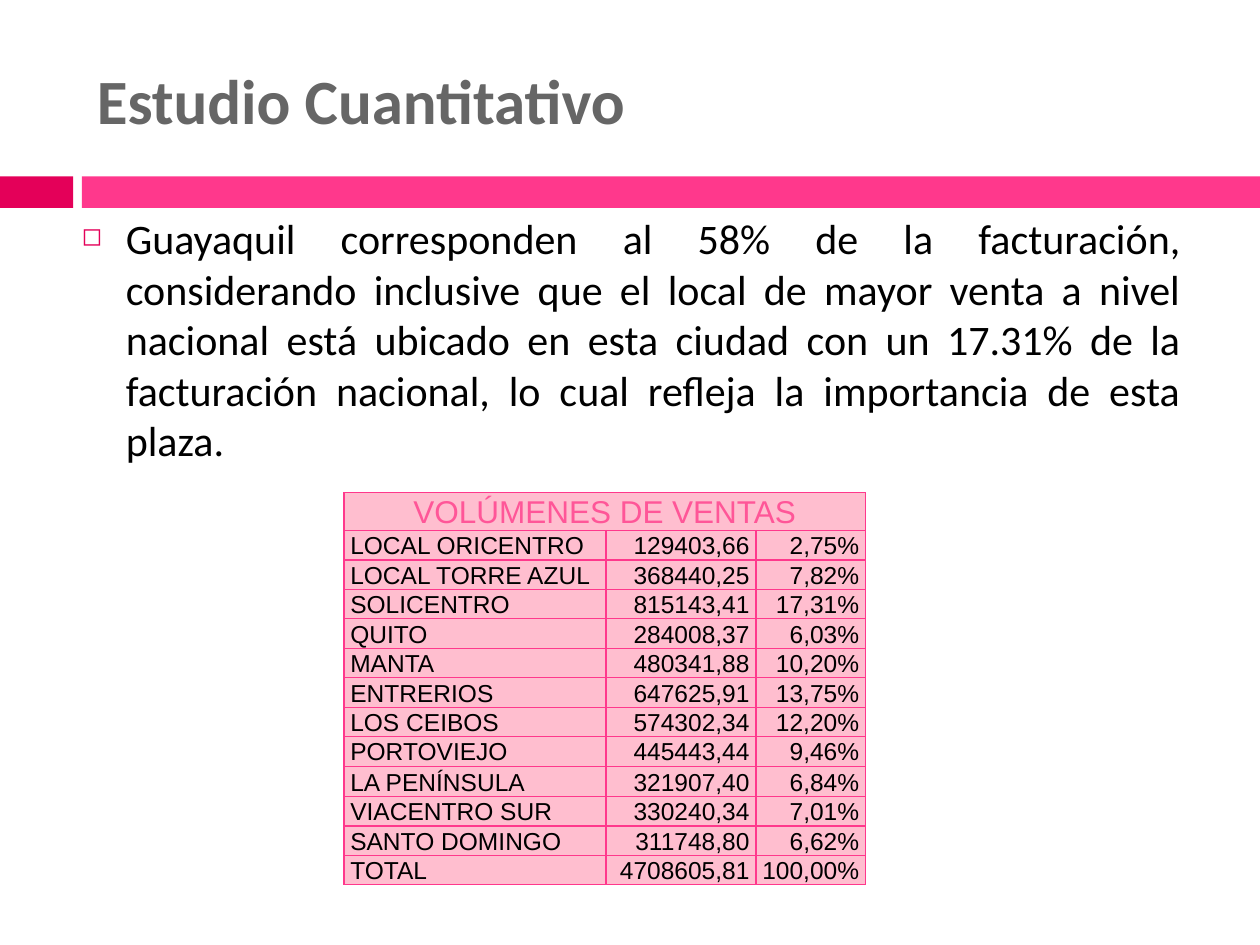
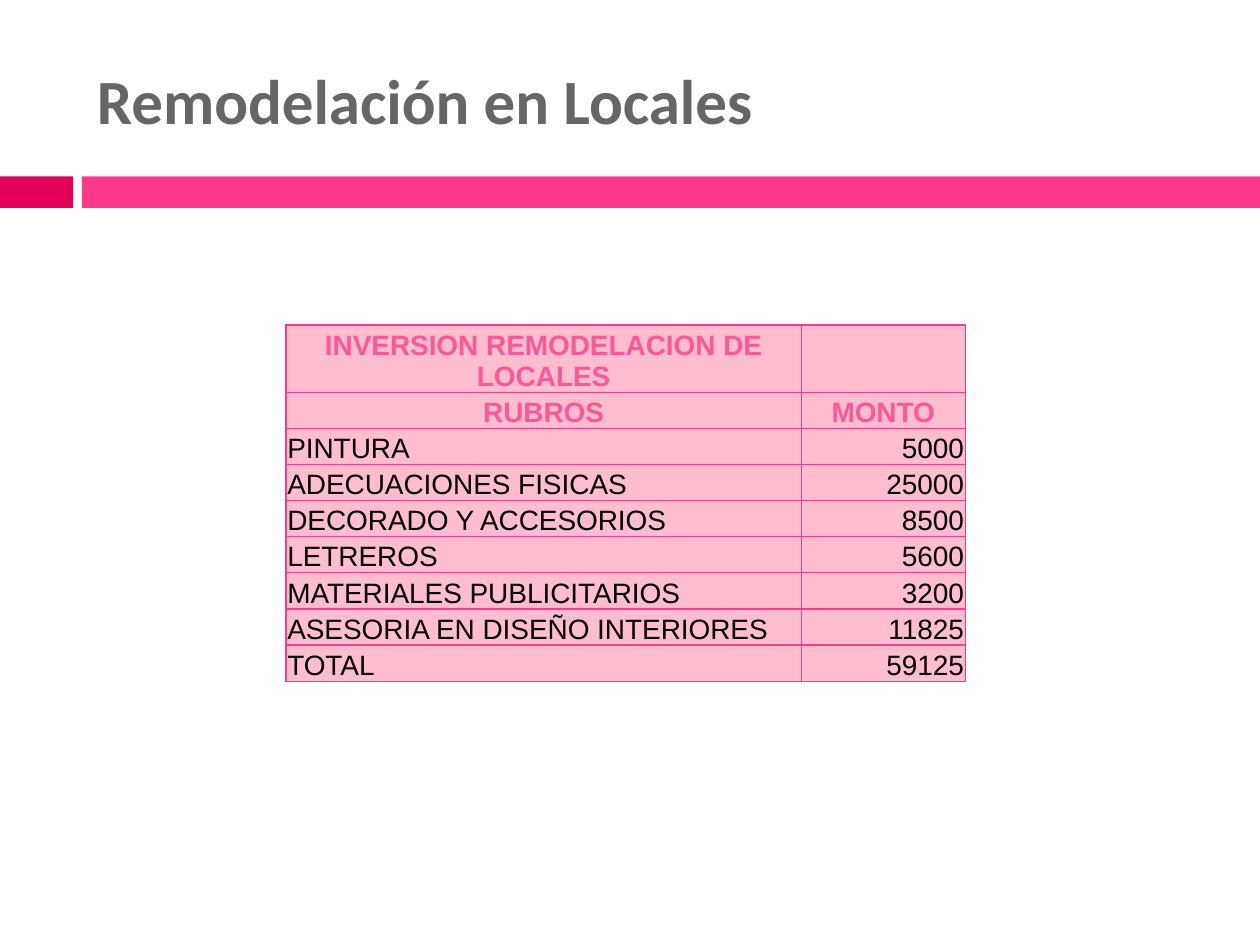
from pptx import Presentation
from pptx.dml.color import RGBColor as RGB
from pptx.enum.shapes import MSO_SHAPE as Shape
from pptx.enum.text import MSO_ANCHOR as Anchor, PP_ALIGN as Align
from pptx.oxml import parse_xml
from pptx.oxml.ns import nsdecls
from pptx.util import Inches, Pt

ROSE = RGB(0xE4, 0x00, 0x59)
PINK = RGB(0xFF, 0x38, 0x8C)
PALE = RGB(0xFF, 0xBE, 0xCF)
HEAD = RGB(0xFF, 0x56, 0x98)
GRAY = RGB(0x66, 0x66, 0x66)
BLACK = RGB(0x00, 0x00, 0x00)

# The slide is a grid of square units
COLS, ROWS = 100, 75
WIDE, HIGH = Inches(10), Inches(7.5)

SALES = [
    ("LOCAL ORICENTRO", "129403,66", "2,75%"),
    ("LOCAL TORRE AZUL", "368440,25", "7,82%"),
    ("SOLICENTRO", "815143,41", "17,31%"),
    ("QUITO", "284008,37", "6,03%"),
    ("MANTA", "480341,88", "10,20%"),
    ("ENTRERIOS", "647625,91", "13,75%"),
    ("LOS CEIBOS", "574302,34", "12,20%"),
    ("PORTOVIEJO", "445443,44", "9,46%"),
    ("LA PENÍNSULA", "321907,40", "6,84%"),
    ("VIACENTRO SUR", "330240,34", "7,01%"),
    ("SANTO DOMINGO", "311748,80", "6,62%"),
    ("TOTAL", "4708605,81", "100,00%"),
]
COSTS = [
    ("PINTURA", "5000"),
    ("ADECUACIONES FISICAS", "25000"),
    ("DECORADO Y ACCESORIOS", "8500"),
    ("LETREROS", "5600"),
    ("MATERIALES PUBLICITARIOS", "3200"),
    ("ASESORIA EN DISEÑO INTERIORES", "11825"),
    ("TOTAL", "59125"),
]


class Deck:
    def __init__(self):
        self.show = Presentation()
        self.show.slide_width, self.show.slide_height = WIDE, HIGH
        self.slide = None

    def col(self, n):
        return int(WIDE * n / COLS)

    def row(self, n):
        return int(HIGH * n / ROWS)

    def box(self, x, y, w, h):
        return self.col(x), self.row(y), self.col(w), self.row(h)

    def page(self, title):
        """Start a slide with its band and title."""
        self.slide = self.show.slides.add_slide(self.show.slide_layouts[6])
        self.band(0, 5.8, ROSE)
        self.band(6.5, COLS - 6.5, PINK)
        frame = self.text(6.7, 2.5, 89.2, 10.8, Anchor.MIDDLE)
        self.run(frame.paragraphs[0], title, 36, GRAY, "Calibri", True)

    def band(self, x, w, color):
        bar = self.slide.shapes.add_shape(Shape.RECTANGLE, *self.box(x, 14, w, 2.5))
        bar.shadow.inherit = False
        bar.fill.solid()
        bar.fill.fore_color.rgb = color
        bar.line.fill.background()

    def text(self, x, y, w, h, anchor=Anchor.TOP):
        frame = self.slide.shapes.add_textbox(*self.box(x, y, w, h)).text_frame
        frame.word_wrap = True
        frame.vertical_anchor = anchor
        return frame

    def run(self, para, words, size, color, face, bold=False):
        run = para.add_run()
        run.text = words
        font = run.font
        font.size, font.name, font.bold = Pt(size), face, bold
        font.color.rgb = color

    def bullet(self, x, y, w, h, words):
        para = self.text(x, y, w, h).paragraphs[0]
        para.alignment = Align.JUSTIFY
        para.space_before = Pt(7)
        props = para._p.get_or_add_pPr()
        props.set("marL", str(self.col(3.5)))
        props.set("indent", str(-self.col(3.5)))
        for mark in (f'<a:buClr {nsdecls("a")}><a:srgbClr val="{ROSE}"/></a:buClr>',
                     f'<a:buSzPct {nsdecls("a")} val="60000"/>',
                     f'<a:buChar {nsdecls("a")} char="◻"/>'):
            props.append(parse_xml(mark))
        self.run(para, words, 24, BLACK, "Calibri")

    def table(self, x, y, cols, rows, data, sizes, heads, pad, bold=False):
        """Draw data; the first rows (heads) are centred and pink."""
        area = self.box(x, y, sum(cols), sum(rows))
        grid = self.slide.shapes.add_table(len(rows), len(cols), *area).table
        grid.first_row = grid.horz_banding = False
        for part, size in zip(grid.columns, cols):
            part.width = self.col(size)
        for part, size in zip(grid.rows, rows):
            part.height = self.row(size)
        for r, line in enumerate(data):
            top = r < heads
            for c, words in enumerate(line):
                cell = grid.cell(r, c)
                self.style(cell, pad)
                para = cell.text_frame.paragraphs[0]
                para.alignment = (Align.CENTER if top else
                                  Align.RIGHT if c else Align.LEFT)
                if words:
                    self.run(para, words, sizes[0 if top else 1],
                             HEAD if top else BLACK, "Arial", top and bold)
        return grid

    def style(self, cell, pad):
        cell.margin_left = cell.margin_right = self.col(pad)
        cell.margin_top = cell.margin_bottom = 0
        cell.vertical_anchor = Anchor.BOTTOM
        props = cell._tc.get_or_add_tcPr()
        for side in "LRTB":
            props.append(parse_xml(
                f'<a:ln{side} {nsdecls("a")} w="{Pt(0.79)}"><a:solidFill>'
                f'<a:srgbClr val="{PINK}"/></a:solidFill></a:ln{side}>'))
        cell.fill.solid()
        cell.fill.fore_color.rgb = PALE


def main():
    deck = Deck()

    # Sales by shop
    deck.page("Estudio Cuantitativo")
    deck.bullet(5.5, 16.4, 89.2, 20.8,
                "Guayaquil corresponden al 58% de la facturación, considerando "
                "inclusive que el local de mayor venta a nivel nacional está "
                "ubicado en esta ciudad con un 17.31% de la facturación nacional, "
                "lo cual refleja la importancia de esta plaza.")
    rows = [2.4 if name == "LA PENÍNSULA" else 2 for name, *_ in SALES]
    grid = deck.table(27.3, 39.1, [20.8, 11.9, 8.7], [2] + rows,
                      [("VOLÚMENES DE VENTAS", "", "")] + SALES, (18, 14), 1, 0.5)
    grid.cell(0, 0).merge(grid.cell(0, 2))

    # Cost of the works
    deck.page("Remodelación en Locales")
    data = [("INVERSION REMODELACION DE LOCALES", ""), ("RUBROS", "MONTO")] + COSTS
    deck.table(22.7, 25.8, [40.9, 13], [25.8 / len(data)] * len(data),
               data, (16, 16), 2, 0.1, True)

    deck.show.save("out.pptx")


if __name__ == "__main__":
    main()
